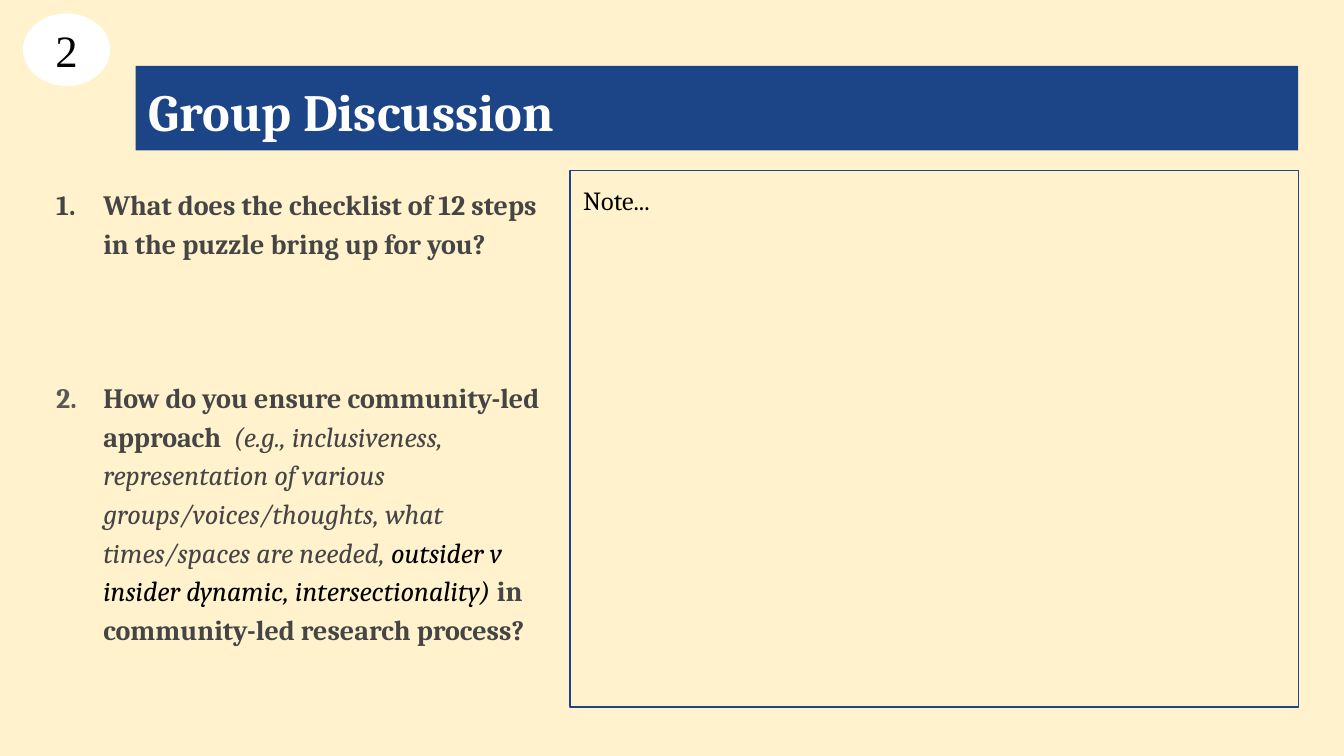
from lxml import etree
from pptx import Presentation
from pptx.dml.color import RGBColor
from pptx.enum import shapes, text
from pptx.oxml.ns import qn
from pptx.util import Inches, Pt

NAVY, CREAM, WHITE, BLACK = "1C4587", "FFF2CC", "FFFFFF", "000000"
DARK, GREY = "454545", "595959"


def rgb(value):
    """Return the colour for a hex string."""
    return RGBColor.from_string(value)


def add_run(p, content, size=15, font="Cambria", color=DARK, bold=False, italic=False):
    """Append a formatted run to a paragraph."""
    r = p.add_run()
    r.text = content
    r.font.name, r.font.size = font, Pt(size)
    r.font.bold, r.font.italic = bold, italic
    r.font.color.rgb = rgb(color)


def set_frame(sp, anchor=text.MSO_ANCHOR.TOP):
    """Wrap the text of a shape with even margins and return its frame."""
    tf = sp.text_frame
    tf.word_wrap = True
    tf.auto_size = text.MSO_AUTO_SIZE.NONE
    tf.vertical_anchor = anchor
    tf.margin_left = tf.margin_right = Inches(0.1)
    tf.margin_top = tf.margin_bottom = Inches(0.1)
    return tf


def add_box(s, kind, box, content, fill=None, line=None,
            align=text.PP_ALIGN.LEFT, anchor=text.MSO_ANCHOR.TOP, **fmt):
    """Add a preset shape holding one line of text."""
    sp = s.shapes.add_shape(kind, *map(Inches, box))
    sp.shadow.inherit = False
    if fill:
        sp.fill.solid()
        sp.fill.fore_color.rgb = rgb(fill)
    else:
        sp.fill.background()
    if line:
        sp.line.color.rgb = rgb(line)
        sp.line.width = Pt(0.75)
    else:
        sp.line.fill.background()
    p = set_frame(sp, anchor).paragraphs[0]
    p.alignment = align
    add_run(p, content, **fmt)


def set_number(p, color):
    """Give a paragraph an automatic number with a hanging indent."""
    pPr = p._p.get_or_add_pPr()
    pPr.set("marL", str(Inches(0.5)))
    pPr.set("indent", str(Inches(-0.35)))
    clr = etree.SubElement(pPr, qn("a:buClr"))
    etree.SubElement(clr, qn("a:srgbClr"), val=color)
    etree.SubElement(pPr, qn("a:buFont"), typeface="Cambria")
    etree.SubElement(pPr, qn("a:buAutoNum"), type="arabicPeriod")


def add_questions(s, box, questions):
    """Add a numbered list of questions, each a number colour and its runs."""
    tf = set_frame(s.shapes.add_textbox(*map(Inches, box)))
    for i, (color, runs) in enumerate(questions):
        p = tf.add_paragraph() if i else tf.paragraphs[0]
        p.line_spacing = 1.15
        p.space_before = Pt(62 if i else 0)
        set_number(p, color)
        for content, fmt in runs:
            add_run(p, content, **fmt)


def main():
    """Build the group discussion slide."""
    prs = Presentation()
    prs.slide_width, prs.slide_height = Inches(10), Inches(10 * 9 / 16)
    s = prs.slides.add_slide(prs.slide_layouts[6])
    s.background.fill.solid()
    s.background.fill.fore_color.rgb = rgb(CREAM)

    rect, oval = shapes.MSO_SHAPE.RECTANGLE, shapes.MSO_SHAPE.OVAL
    bold = {"bold": True}
    add_box(s, rect, (1.01, 0.49, 8.65, 0.63), "Group Discussion",
            fill=NAVY, size=28, color=WHITE, bold=True)
    add_questions(s, (0.17, 1.26, 4.02, 3.74), [
        (DARK, [("What does the checklist of 12 steps in the puzzle bring up for you?", bold)]),
        (GREY, [
            ("How do you ensure community-led approach  ", bold),
            ("(e.g., inclusiveness, representation of various groups/voices/thoughts, "
             "what times/spaces are needed, ", {"italic": True}),
            ("outsider v insider dynamic, intersectionality) ", {"italic": True, "color": BLACK}),
            ("in community-led research process?", bold),
        ]),
    ])
    add_box(s, rect, (4.24, 1.27, 5.42, 3.99), "Note...", line=NAVY, size=14, color=BLACK)
    add_box(s, oval, (0.17, 0.1, 0.65, 0.54), "2", fill=WHITE,
            align=text.PP_ALIGN.CENTER, anchor=text.MSO_ANCHOR.MIDDLE,
            size=24, font="Times New Roman", color=BLACK)
    prs.save("out.pptx")


if __name__ == "__main__":
    main()
